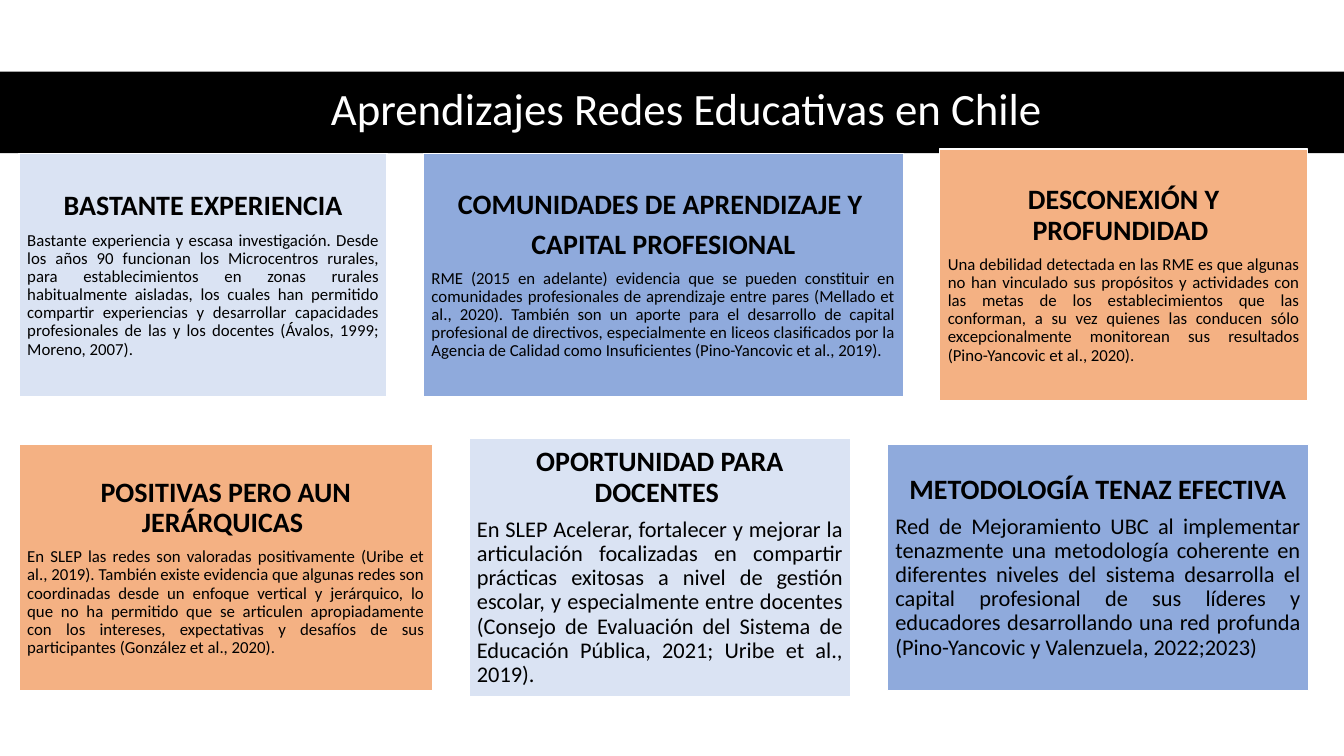
from pptx import Presentation, util as u
from pptx.dml.color import RGBColor
from pptx.enum import shapes, text

FONT = "Calibri"
PALE, BLUE, ORANGE = "DAE3F3", "8FAADC", "F4B183"
LEFT, GAP = 0.19, 0.36

# Each card: width, height, fill, heading lines, body size, body
TOP_CARDS = [
    (3.65, 2.42, PALE, ["BASTANTE EXPERIENCIA"], 12,
     "Bastante experiencia y escasa investigación. Desde los años 90 funcionan los "
     "Microcentros rurales, para establecimientos en zonas rurales habitualmente "
     "aisladas, los cuales han permitido compartir experiencias y desarrollar "
     "capacidades profesionales de las y los docentes (Ávalos, 1999; Moreno, 2007). "),
    (4.76, 2.42, BLUE, ["COMUNIDADES DE APRENDIZAJE Y ", "CAPITAL PROFESIONAL"], 12,
     "RME (2015 en adelante) evidencia que se pueden constituir en comunidades "
     "profesionales de aprendizaje entre pares (Mellado et al., 2020). También son un "
     "aporte para el desarrollo de capital profesional de directivos, especialmente en "
     "liceos clasificados por la Agencia de Calidad como Insuficientes (Pino-Yancovic "
     "et al., 2019). "),
    (3.65, 2.5, ORANGE, ["DESCONEXIÓN Y PROFUNDIDAD "], 12,
     "Una debilidad detectada en las RME es que algunas no han vinculado sus propósitos "
     "y actividades con las metas de los establecimientos que las conforman, a su vez "
     "quienes las conducen sólo excepcionalmente monitorean sus resultados "
     "(Pino-Yancovic et al., 2020). "),
]
BOTTOM_CARDS = [
    (4.1, 2.44, ORANGE, ["POSITIVAS PERO AUN JERÁRQUICAS "], 12,
     "En SLEP las redes son valoradas positivamente (Uribe et al., 2019). También existe "
     "evidencia que algunas redes son coordinadas desde un enfoque vertical y jerárquico, "
     "lo que no ha permitido que se articulen apropiadamente con los intereses, "
     "expectativas y desafíos de sus participantes (González et al., 2020). "),
    (3.79, 2.57, PALE, ["OPORTUNIDAD PARA DOCENTES "], 16,
     "En SLEP Acelerar, fortalecer y mejorar la articulación focalizadas en compartir "
     "prácticas exitosas a nivel de gestión escolar, y especialmente entre docentes "
     "(Consejo de Evaluación del Sistema de Educación Pública, 2021; Uribe et al., "
     "2019). "),
    (4.18, 2.44, BLUE, ["METODOLOGÍA TENAZ EFECTIVA"], 16,
     "Red de Mejoramiento UBC al implementar tenazmente una metodología coherente en "
     "diferentes niveles del sistema desarrolla el capital profesional de sus líderes y "
     "educadores desarrollando una red profunda (Pino-Yancovic y Valenzuela, 2022;2023)"),
]


def color(value):
    return RGBColor.from_string(value)


def write(p, words, size, bold=False, ink="000000", align=text.PP_ALIGN.CENTER, after=0):
    p.alignment = align
    p.line_spacing = 0.9
    p.space_after = u.Pt(after)
    r = p.add_run()
    r.text = words
    r.font.name, r.font.size, r.font.bold = FONT, u.Pt(size), bold
    r.font.color.rgb = color(ink)


def add_rect(s, x, y, w, h, fill, line=None):
    sp = s.shapes.add_shape(shapes.MSO_SHAPE.RECTANGLE, *map(u.Inches, (x, y, w, h)))
    sp.shadow.inherit = False
    sp.fill.solid()
    sp.fill.fore_color.rgb = color(fill)
    if line:
        sp.line.color.rgb = color(line)
        sp.line.width = u.Pt(1)
    else:
        sp.line.fill.background()
    return sp


def add_title(s, words, x, y, w, h):
    title = s.shapes.title
    title.left, title.top, title.width, title.height = map(u.Inches, (x, y, w, h))
    tf = title.text_frame
    tf.word_wrap = True
    tf.vertical_anchor = text.MSO_ANCHOR.MIDDLE
    write(tf.paragraphs[0], words, 32, ink="FFFFFF")


def add_card(s, x, y, w, h, fill, headings, size, body):
    tf = add_rect(s, x, y, w, h, fill, line="FFFFFF").text_frame
    tf.word_wrap = True
    tf.vertical_anchor = text.MSO_ANCHOR.MIDDLE
    tf.margin_left = tf.margin_right = tf.margin_top = tf.margin_bottom = u.Inches(0.08)
    p = tf.paragraphs[0]
    for heading in headings:
        write(p, heading, 20, bold=True, after=7)
        p = tf.add_paragraph()
    write(p, body, size, align=text.PP_ALIGN.JUSTIFY, after=0.35 * size)


def add_card_row(s, cards, x, middle):
    """Place cards left to right, each centred on the height `middle`."""
    for w, h, *content in cards:
        add_card(s, x, middle - h / 2, w, h, *content)
        x += w + GAP


def main():
    prs = Presentation()
    prs.slide_width, prs.slide_height = u.Inches(13.33), u.Inches(7.5)
    s = prs.slides.add_slide(prs.slide_layouts[5])
    band = add_rect(s, 0, 0.71, 13.33, 0.81, "000000")
    s.shapes.title.element.addprevious(band.element)  # band goes behind the title
    add_title(s, "Aprendizajes Redes Educativas en Chile ", 0.73, 0.7, 12.26, 0.81)
    add_card_row(s, TOP_CARDS, LEFT, 2.73)
    add_card_row(s, BOTTOM_CARDS, LEFT, 5.63)
    prs.save("out.pptx")


if __name__ == "__main__":
    main()
